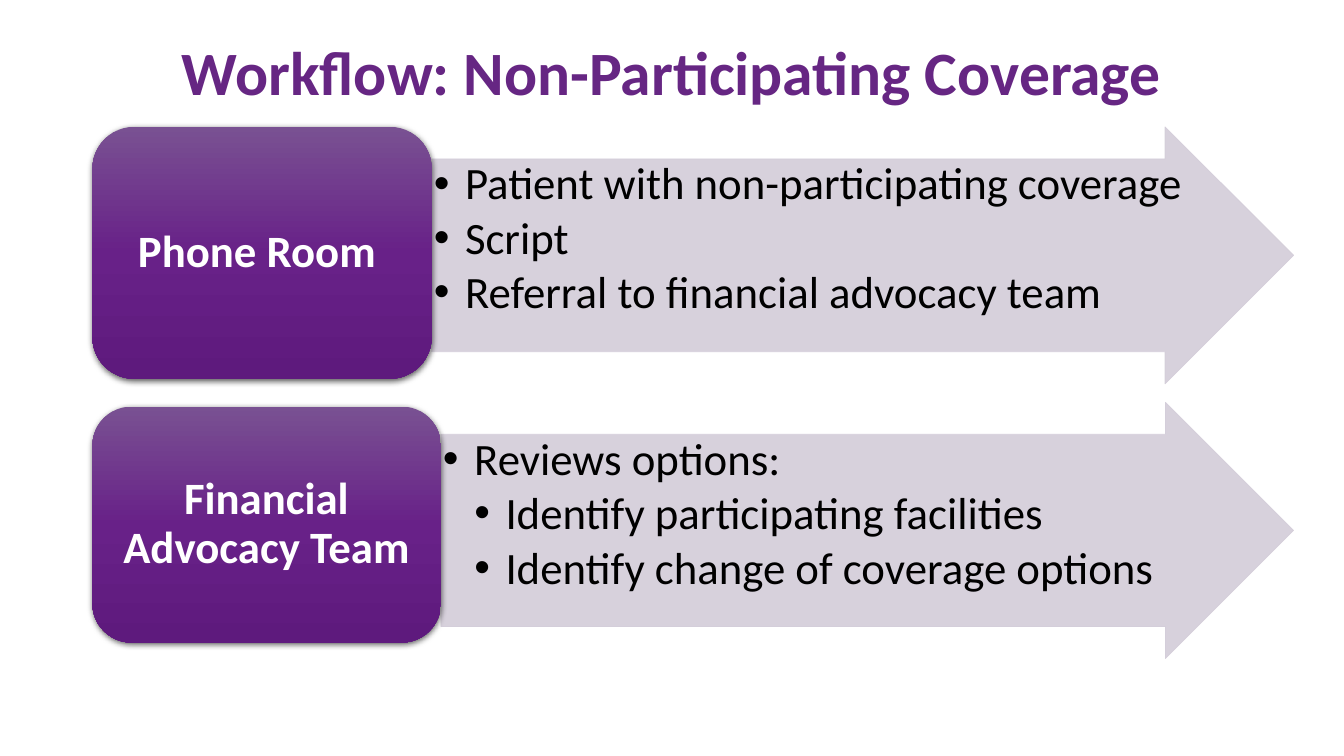
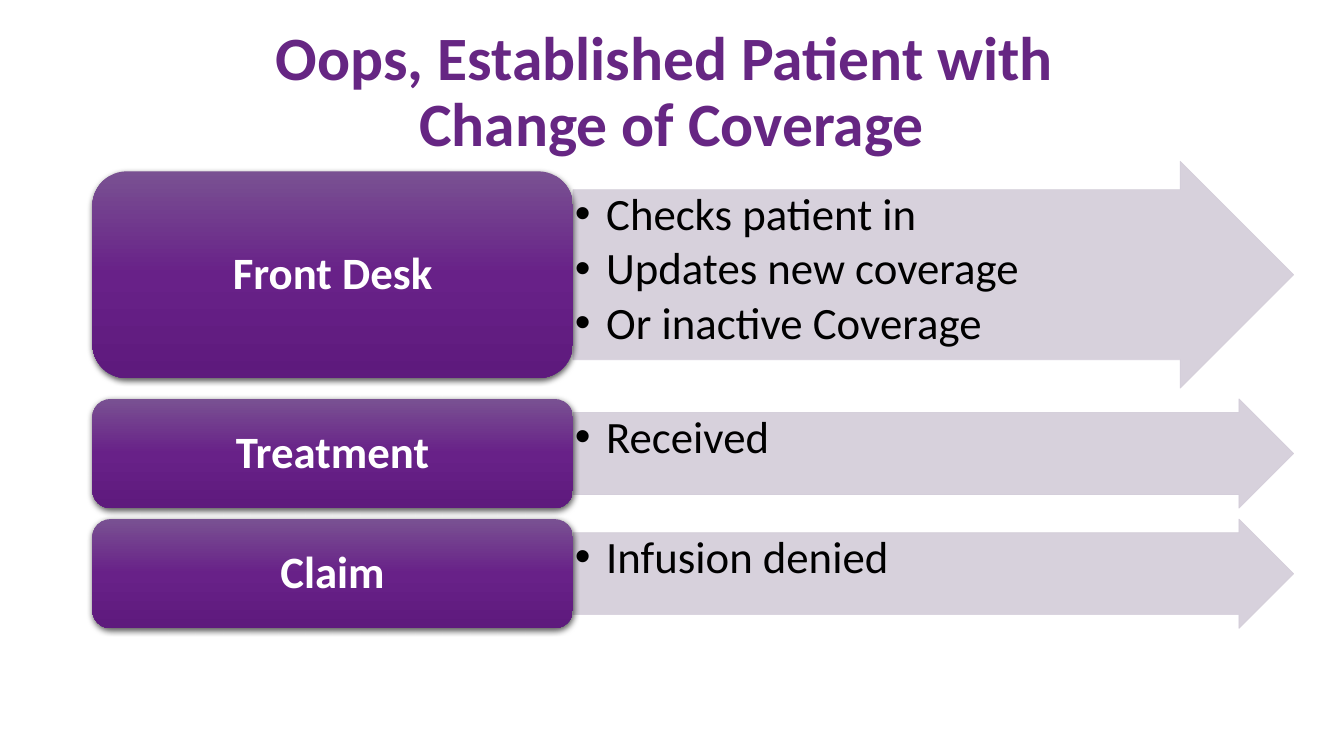
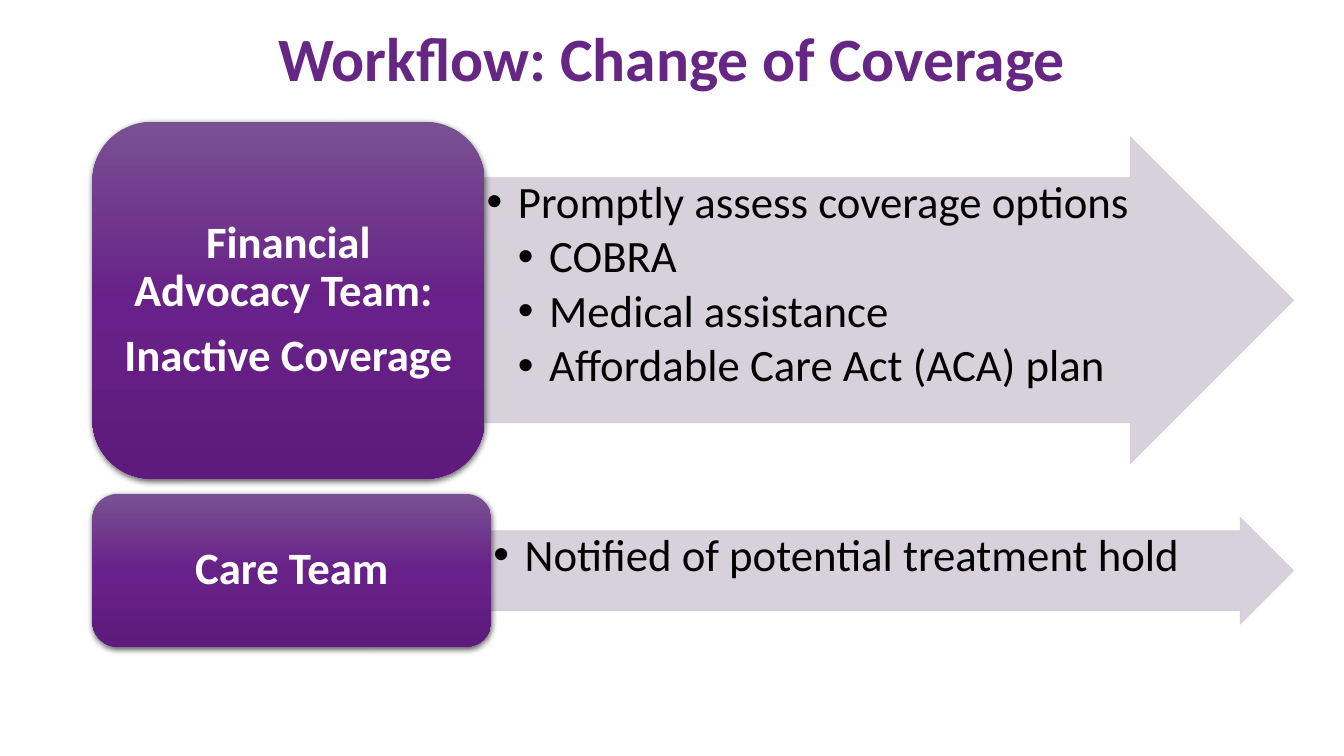
"""Three workflow slides: purple boxes, each with an arrow of bullet points."""
from lxml.etree import SubElement as Sub
from pptx import Presentation
from pptx.dml.color import RGBColor
from pptx.enum.shapes import MSO_SHAPE as Kind
from pptx.enum.text import MSO_ANCHOR as Anchor, MSO_AUTO_SIZE as Auto, PP_ALIGN as Align
from pptx.oxml import parse_xml
from pptx.oxml.ns import nsdecls, qn
from pptx.util import Inches, Pt

COLS, ROWS = 160, 90
CELL = Inches(7.5) / ROWS
LEFT, RIGHT = 11, 154
PLUM, PALE, WHITE, BLACK = "662683", "D3CDD9", "FFFFFF", "000000"
STOPS = [(0, "795192"), (50, "682188"), (100, "5E1A7D")]
STEP = Inches(0.31)


def place(shape, left, top, width, height):
    """Put a shape on the grid."""
    shape.left, shape.top = round(left * CELL), round(top * CELL)
    shape.width, shape.height = round(width * CELL), round(height * CELL)


def write(shape, lines, size, hue, bold, gap=0, pad=(0.1, 0.05)):
    """Fill a shape with (level, text) lines; level 0 is centred without a bullet."""
    frame = shape.text_frame
    frame.word_wrap, frame.auto_size = True, Auto.NONE
    frame.margin_left = frame.margin_right = Inches(pad[0])
    frame.margin_top = frame.margin_bottom = Inches(pad[1])
    frame.vertical_anchor = Anchor.TOP if lines[0][0] else Anchor.MIDDLE
    frame.text = "\n".join(text for level, text in lines)
    for i, (para, (level, text)) in enumerate(zip(frame.paragraphs, lines)):
        para.alignment = Align.LEFT if level else Align.CENTER
        para.line_spacing = 0.9
        para.space_before = Pt(gap if i else 0)
        if level:
            prop = para._p.get_or_add_pPr()
            prop.set("marL", str(level * STEP))
            prop.set("indent", str(-STEP))
            Sub(prop, qn("a:buFont")).set("typeface", "Arial")
            Sub(prop, qn("a:buChar")).set("char", "•")
        for run in para.runs:
            font = run.font
            font.name, font.size, font.bold = "Calibri", Pt(size), bold
            font.color.rgb = RGBColor.from_string(hue)


SLIDES = [
    ("Workflow: Non-Participating Coverage", 2.9, 12.2, [
        (51.4, (15.1, 30), (15.1, 30.6), ["Phone Room "],
         [(1, "Patient with non-participating coverage"), (1, "Script"),
          (1, "Referral to financial advocacy team")]),
        (52.5, (48.4, 28.1), (47.9, 30.5), ["Financial Advocacy Team"],
         [(1, "Reviews options:"), (2, "Identify participating facilities"),
          (2, "Identify change of coverage options")]),
    ]),
    ("Oops, Established Patient with \vChange of Coverage", 3.1, 16.1, [
        (68.2, (20.4, 24.6), (19.2, 27), ["Front Desk"],
         [(1, "Checks patient in"), (1, "Updates new coverage"),
          (1, "Or inactive Coverage")]),
        (68.2, (47.5, 13), (47.5, 13), ["Treatment"], [(1, "Received")]),
        (68.2, (61.8, 13), (61.8, 13), ["Claim"], [(1, "Infusion denied")]),
    ]),
    ("Workflow: Change of Coverage", 1.2, 12.2, [
        (57.7, (14.5, 42.5), (16.3, 38.9),
         ["Financial Advocacy Team: ", "Inactive Coverage"],
         [(1, "Promptly assess coverage options"), (2, "COBRA"),
          (2, "Medical assistance"), (2, "Affordable Care Act (ACA) plan")]),
        (58.5, (58.8, 18.2), (61.6, 12.7), ["Care Team"],
         [(1, "Notified of potential treatment hold")]),
    ]),
]

deck = Presentation()
deck.slide_width, deck.slide_height = round(COLS * CELL), round(ROWS * CELL)

for name, top, high, bands in SLIDES:
    slide = deck.slides.add_slide(deck.slide_layouts[5])
    title = slide.shapes.title
    place(title, LEFT, top, COLS - 2 * LEFT, high)
    write(title, [(0, name)], 44, PLUM, True)

    for split, box_span, arrow_span, label, points in bands:
        arrow = slide.shapes.add_shape(Kind.RIGHT_ARROW, 0, 0, 0, 0)
        place(arrow, split, arrow_span[0], RIGHT - split, arrow_span[1])
        arrow.adjustments[0], arrow.adjustments[1] = 0.75, 0.5
        arrow.shadow.inherit = False
        arrow.line.width = Pt(0.5)
        for paint in (arrow.fill, arrow.line.fill):
            paint.solid()
            paint.fore_color.rgb = RGBColor.from_string(PALE)
        for tint in arrow._element.spPr.iter(qn("a:srgbClr")):
            Sub(tint, qn("a:alpha")).set("val", "90000")
        write(arrow, points, 32, BLACK, False, 4.3, (0.02, 0.02))

        box = slide.shapes.add_shape(Kind.ROUNDED_RECTANGLE, 0, 0, 0, 0)
        place(box, LEFT, box_span[0], split - LEFT, box_span[1])
        marks = "".join(f'<a:gs pos="{pos * 1000}"><a:srgbClr val="{hue}"/></a:gs>'
                        for pos, hue in STOPS)
        prop = box._element.spPr
        prop.append(parse_xml(
            f'<a:gradFill {nsdecls("a")} rotWithShape="1"><a:gsLst>{marks}</a:gsLst>'
            '<a:lin ang="5400000" scaled="0"/></a:gradFill>'))
        box.line.fill.background()
        prop.append(parse_xml(
            f'<a:effectLst {nsdecls("a")}><a:outerShdw blurRad="{Pt(4.5)}" '
            f'dist="{Pt(1.5)}" dir="5400000" algn="ctr" rotWithShape="0">'
            f'<a:srgbClr val="{BLACK}"><a:alpha val="63000"/></a:srgbClr>'
            '</a:outerShdw></a:effectLst>'))
        write(box, [(0, text) for text in label], 32, WHITE, True, 11.2, (0.13, 0.07))

deck.save("out.pptx")
